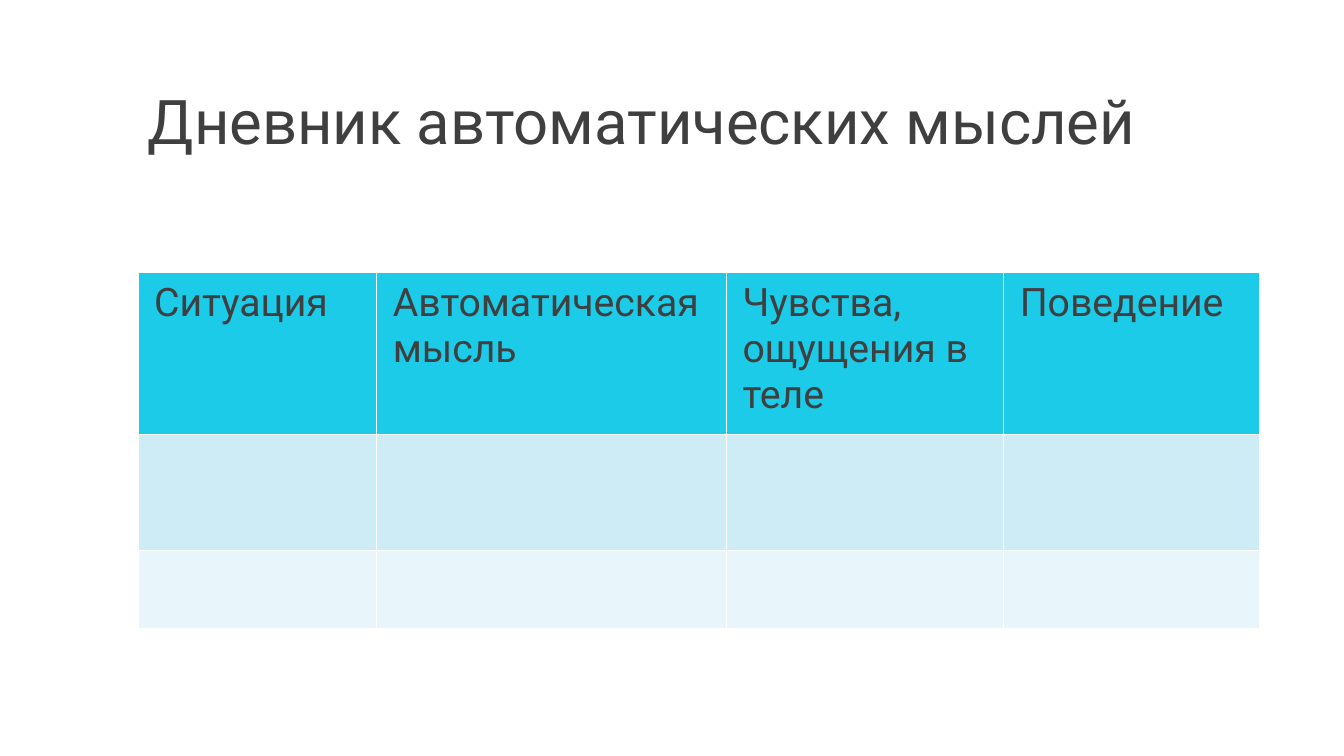
from dataclasses import dataclass

from lxml.etree import SubElement as Sub
from pptx import Presentation
from pptx.dml.color import RGBColor as RGB
from pptx.enum.text import MSO_ANCHOR as Anchor
from pptx.oxml.ns import qn
from pptx.util import Pt


@dataclass(frozen=True)
class Theme:
    font: str = "Roboto"
    ink: str = "3F3F3F"
    rule: str = "FFFFFF"
    rows: tuple = ("1BCBE8", "CDECF6", "E8F6FB")
    title: int = 44
    head: int = 28


THEME = Theme()
HEADS = ["Ситуация", "Автоматическая мысль", "Чувства, ощущения в теле", "Поведение"]
WIDTHS = [170.6, 249.8, 198, 182.9]
HEIGHTS = [115.9, 82.8, 56.2]


def write(frame, text, size, color=THEME.ink, spacing=1.0):
    para = frame.paragraphs[0]
    para.line_spacing = spacing
    run = para.add_run()
    run.text = text
    run.font.name = THEME.font
    run.font.size = Pt(size)
    run.font.color.rgb = RGB.from_string(color)


def add_title(slide, text, left, top, width, height):
    frame = slide.shapes.add_textbox(Pt(left), Pt(top), Pt(width), Pt(height)).text_frame
    frame.word_wrap = True
    frame.vertical_anchor = Anchor.MIDDLE
    write(frame, text, THEME.title, spacing=0.9)


def edge(cell, color, width=1):
    """Rule all four sides of a cell; call before its fill is set."""
    props = cell._tc.get_or_add_tcPr()
    for side in "LRTB":
        line = Sub(props, qn(f"a:ln{side}"), w=str(Pt(width)))
        Sub(Sub(line, qn("a:solidFill")), qn("a:srgbClr"), val=color)


def add_diary(slide, left, top, width, height):
    """Place the table, sharing the box among columns and rows in proportion."""
    table = slide.shapes.add_table(len(HEIGHTS), len(WIDTHS), Pt(left), Pt(top),
                                   Pt(width), Pt(height)).table
    for col, share in zip(table.columns, WIDTHS):
        col.width = Pt(width * share / sum(WIDTHS))
    for row, share, color in zip(table.rows, HEIGHTS, THEME.rows):
        row.height = Pt(height * share / sum(HEIGHTS))
        for cell in row.cells:
            edge(cell, THEME.rule)
            cell.fill.solid()
            cell.fill.fore_color.rgb = RGB.from_string(color)
            cell.margin_left = cell.margin_right = Pt(11.5)
            cell.margin_top = cell.margin_bottom = Pt(5.75)
    for cell, text in zip(table.rows[0].cells, HEADS):
        write(cell.text_frame, text, THEME.head)
        cell.text_frame.paragraphs[0].runs[0].font.bold = False


def main():
    deck = Presentation()
    deck.slide_width, deck.slide_height = Pt(960), Pt(540)
    slide = deck.slides.add_slide(deck.slide_layouts[6])
    left, width = 98.6, sum(WIDTHS)
    add_title(slide, "Дневник автоматических мыслей", left, 30.2, width, 117.4)
    add_diary(slide, left, 194.4, width, sum(HEIGHTS))
    deck.save("out.pptx")


if __name__ == "__main__":
    main()
